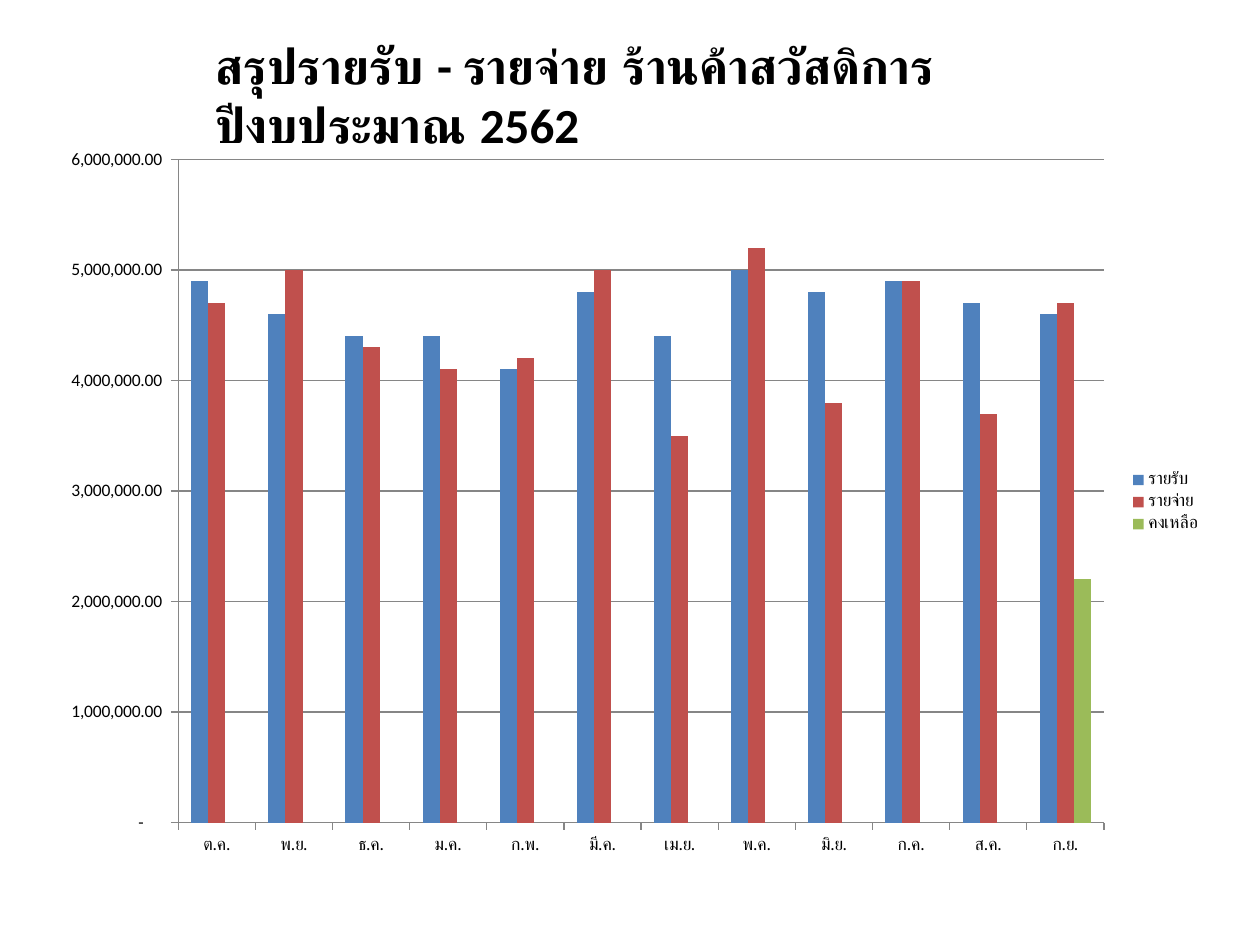
from dataclasses import dataclass

from pptx import Presentation
from pptx.chart.data import CategoryChartData
from pptx.dml.color import RGBColor
from pptx.enum.chart import XL_CHART_TYPE as ChartType, XL_LEGEND_POSITION as LegendPos
from pptx.enum.chart import XL_TICK_MARK as Tick
from pptx.enum.text import MSO_ANCHOR as Anchor, MSO_AUTO_SIZE as AutoSize, PP_ALIGN as Align
from pptx.util import Inches, Pt


@dataclass(frozen=True)
class Theme:
    font: str = "Calibri"
    title_size: int = 28
    chart_size: int = 10
    text: str = "000000"
    grid: str = "868686"
    series: tuple = ("4F81BD", "C0504D", "9BBB59")


MONTHS = ["ต.ค.", "พ.ย.", "ธ.ค.", "ม.ค.", "ก.พ.", "มี.ค.",
          "เม.ย.", "พ.ค.", "มิ.ย.", "ก.ค.", "ส.ค.", "ก.ย."]
# Amounts in millions
ACCOUNTS = {
    "รายรับ": [4.9, 4.6, 4.4, 4.4, 4.1, 4.8, 4.4, 5.0, 4.8, 4.9, 4.7, 4.6],
    "รายจ่าย": [4.7, 5.0, 4.3, 4.1, 4.2, 5.0, 3.5, 5.2, 3.8, 4.9, 3.7, 4.7],
    "คงเหลือ": [None] * 11 + [2.2],
}
MILLION = 1_000_000
AMOUNT_FORMAT = '_(* #,##0.00_);_(* \\(#,##0.00\\);_(* "-"??_);_(@_)'


class SlideBuilder:
    def __init__(self, slide, theme):
        self.slide = slide
        self.theme = theme

    def style_font(self, font, size, bold=False):
        font.name = self.theme.font
        font.size = Pt(size)
        font.bold = bold
        font.color.rgb = RGBColor.from_string(self.theme.text)

    def title(self, text, left, top, width, height):
        heading = self.slide.shapes.title
        heading.left, heading.top = Inches(left), Inches(top)
        heading.width, heading.height = Inches(width), Inches(height)
        frame = heading.text_frame
        frame.text = text
        frame.word_wrap = True
        frame.auto_size = AutoSize.SHAPE_TO_FIT_TEXT
        frame.vertical_anchor = Anchor.TOP
        paragraph = frame.paragraphs[0]
        paragraph.alignment = Align.LEFT
        self.style_font(paragraph.font, self.theme.title_size, bold=True)

    def column_chart(self, months, accounts, left, top, width, height):
        data = CategoryChartData(number_format=AMOUNT_FORMAT)
        data.categories = months
        for name, amounts in accounts.items():
            data.add_series(name, [a if a is None else round(a * MILLION) for a in amounts])
        chart = self.slide.shapes.add_chart(
            ChartType.COLUMN_CLUSTERED, Inches(left), Inches(top),
            Inches(width), Inches(height), data).chart
        self.style_font(chart.font, self.theme.chart_size)
        chart.has_title = False

        # Columns
        plot = chart.plots[0]
        plot.gap_width = 150
        plot.overlap = 0
        plot.vary_by_categories = False
        for series, color in zip(plot.series, self.theme.series):
            series.invert_if_negative = False
            series.format.fill.solid()
            series.format.fill.fore_color.rgb = RGBColor.from_string(color)

        # Axes and gridlines
        amount_axis = chart.value_axis
        amount_axis.minimum_scale, amount_axis.maximum_scale = 0, 6 * MILLION
        amount_axis.major_unit = MILLION
        amount_axis.has_major_gridlines = True
        amount_axis.tick_labels.number_format = AMOUNT_FORMAT
        amount_axis.tick_labels.number_format_is_linked = False
        for axis in (amount_axis, chart.category_axis):
            axis.major_tick_mark = Tick.OUTSIDE
            axis.minor_tick_mark = Tick.NONE
        for part in (amount_axis, chart.category_axis, amount_axis.major_gridlines):
            part.format.line.color.rgb = RGBColor.from_string(self.theme.grid)
            part.format.line.width = Pt(0.75)

        # Legend
        chart.has_legend = True
        chart.legend.position = LegendPos.RIGHT
        chart.legend.include_in_layout = False


def main():
    prs = Presentation()
    prs.slide_width, prs.slide_height = Inches(10), Inches(7.5)
    title_only = prs.slide_layouts[5]
    builder = SlideBuilder(prs.slides.add_slide(title_only), Theme())
    builder.title("สรุปรายรับ - รายจ่าย ร้านค้าสวัสดิการ ปีงบประมาณ 2562", 1.61, 0.23, 6.99, 0.57)
    builder.column_chart(MONTHS, ACCOUNTS, 0.35, 1.07, 9.29, 5.83)
    prs.save("out.pptx")


if __name__ == "__main__":
    main()
